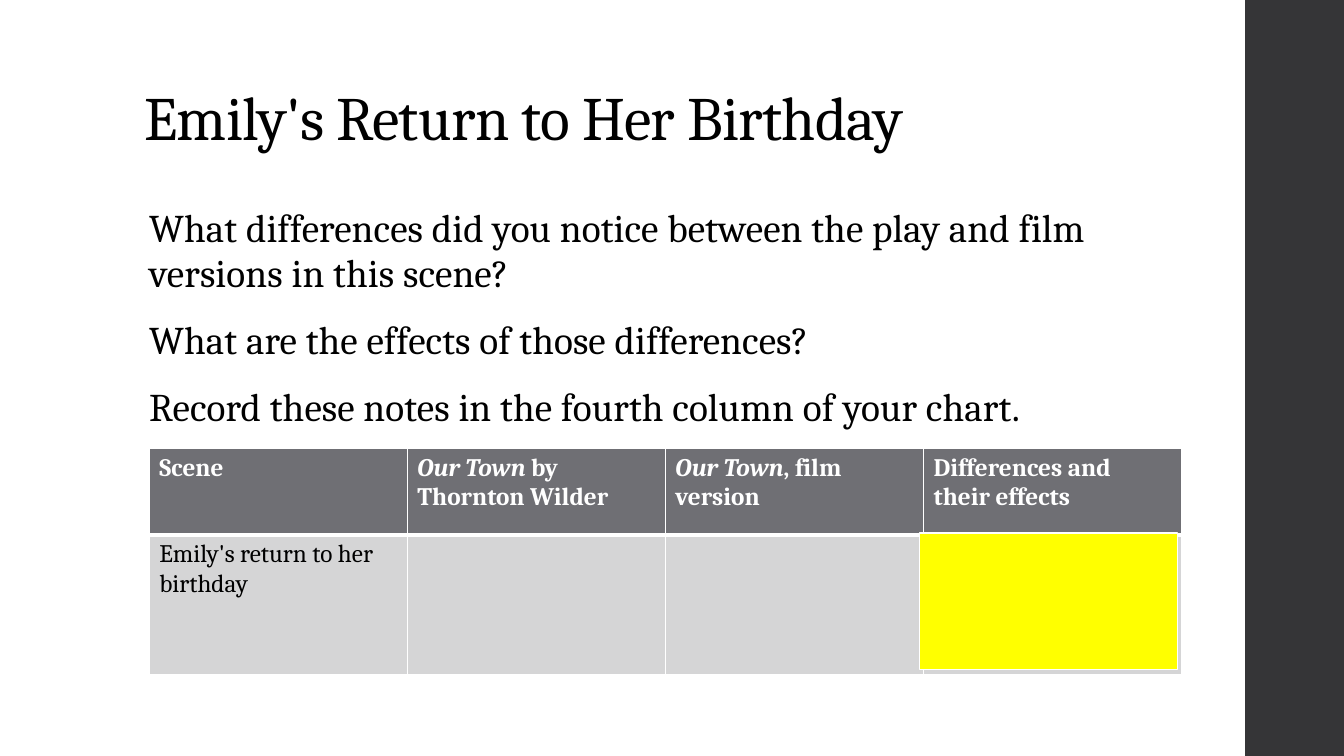
import pptx
import pptx.util
import pptx.dml.color
import pptx.enum.shapes
import pptx.enum.text
import pptx.oxml
import pptx.oxml.ns

Inches, Pt = pptx.util.Inches, pptx.util.Pt

TITLE = "Emily's Return to Her Birthday"
PROMPTS = [
    "What differences did you notice between the play and film versions in this scene?",
    "What are the effects of those differences?",
    "Record these notes in the fourth column of your chart.",
]
# Each cell is a list of (text, italic) spans.
CHART_ROWS = [
    [[("Scene", False)],
     [("Our Town", True), (" by Thornton Wilder", False)],
     [("Our Town", True), (", film version", False)],
     [("Differences and their effects", False)]],
    [[("Emily's return to her birthday", False)], [], [], []],
]
FONT = "Cambria"
BLACK, WHITE, YELLOW = "000000", "FFFFFF", "FFFF00"
SIDEBAR, HEADER, BODY = "353537", "6F6F74", "D5D5D6"

WIDTH, HEIGHT = 13.33, 7.5
SIDEBAR_LEFT = 12.35
TABLE_LEFT, TABLE_TOP, COLUMN = 1.48, 4.45, 2.56
ROW_HEIGHTS = [0.86, 1.38]
HIGHLIGHT_SHIFT = 0.04


def color(hex_code):
    return pptx.dml.color.RGBColor.from_string(hex_code)


def style(span, size, hex_code, bold=False, italic=False, spacing=0):
    """Format one run; spacing is in points between letters."""
    font = span.font
    font.name, font.size, font.bold, font.italic = FONT, Pt(size), bold, italic
    font.color.rgb = color(hex_code)
    if spacing:
        span._r.get_or_add_rPr().set("spc", str(round(spacing * 100)))


def place(shape, left, top, width, height):
    shape.left, shape.top = Inches(left), Inches(top)
    shape.width, shape.height = Inches(width), Inches(height)


def fill_placeholder(shape, texts, size, line_spacing, spacing, anchor):
    frame = shape.text_frame
    frame.text = "\n".join(texts)
    frame.word_wrap = True
    frame.auto_size = pptx.enum.text.MSO_AUTO_SIZE.NONE
    frame.vertical_anchor = anchor
    for para in frame.paragraphs:
        para.alignment = pptx.enum.text.PP_ALIGN.LEFT
        para.line_spacing = line_spacing
        style(para.runs[0], size, BLACK, spacing=spacing)
    return frame.paragraphs


def add_box(page, left, top, width, height, fill, line=None):
    box = page.shapes.add_shape(pptx.enum.shapes.MSO_SHAPE.RECTANGLE, 0, 0, 0, 0)
    place(box, left, top, width, height)
    box.shadow.inherit = False
    box.fill.solid()
    box.fill.fore_color.rgb = color(fill)
    if line:
        box.line.color.rgb = color(line)
        box.line.width = Pt(1.1)
    else:
        box.line.fill.background()


def add_borders(cell, widths):
    """Draw white cell borders, widths in points by side."""
    properties = cell._tc.get_or_add_tcPr()
    for index, (side, width) in enumerate(widths.items()):
        properties.insert(index, pptx.oxml.parse_xml(
            f'<a:ln{side} {pptx.oxml.ns.nsdecls("a")} w="{Pt(width)}"><a:solidFill>'
            f'<a:srgbClr val="{WHITE}"/></a:solidFill></a:ln{side}>'))


def add_notes_chart(page):
    columns = len(CHART_ROWS[0])
    table = page.shapes.add_table(
        len(CHART_ROWS), columns, Inches(TABLE_LEFT), Inches(TABLE_TOP),
        Inches(COLUMN * columns), Inches(sum(ROW_HEIGHTS))).table
    for column in table.columns:
        column.width = Inches(COLUMN)
    for row, (height, contents) in enumerate(zip(ROW_HEIGHTS, CHART_ROWS)):
        table.rows[row].height = Inches(height)
        is_header = row == 0
        for column, spans in enumerate(contents):
            cell = table.cell(row, column)
            cell.fill.solid()
            cell.fill.fore_color.rgb = color(HEADER if is_header else BODY)
            add_borders(cell, {"L": 1, "R": 1, "T": 1 if is_header else 3,
                               "B": 3 if is_header else 1})
            for text, italic in spans:
                span = cell.text_frame.paragraphs[0].add_run()
                span.text = text
                style(span, 18, WHITE if is_header else BLACK, is_header, italic)


def main():
    deck = pptx.Presentation()
    deck.slide_width, deck.slide_height = Inches(WIDTH), Inches(HEIGHT)
    page = deck.slides.add_slide(deck.slide_layouts[1])
    title, body = page.placeholders
    anchors = pptx.enum.text.MSO_ANCHOR

    add_box(page, SIDEBAR_LEFT, 0, WIDTH - SIDEBAR_LEFT, HEIGHT, SIDEBAR)

    place(title, 1.33, 0.13, 10.6, 1.45)
    fill_placeholder(title, [TITLE], 44, 0.9, -0.5, anchors.BOTTOM)

    place(body, 1.38, 2, 10.28, 4.76)
    for para in fill_placeholder(body, PROMPTS, 28, 0.95, 0.1, anchors.TOP):
        para.space_before, para.space_after = Pt(14), Pt(2)
        properties = para._p.get_or_add_pPr()
        properties.set("marL", "0")
        properties.set("indent", "0")
        properties.append(pptx.oxml.parse_xml(
            f'<a:buNone {pptx.oxml.ns.nsdecls("a")}/>'))

    add_notes_chart(page)
    add_box(page, TABLE_LEFT + 3 * COLUMN - HIGHLIGHT_SHIFT,
            TABLE_TOP + ROW_HEIGHTS[0] - HIGHLIGHT_SHIFT / 2,
            COLUMN, 1.35, YELLOW, WHITE)
    deck.save("out.pptx")


if __name__ == "__main__":
    main()
